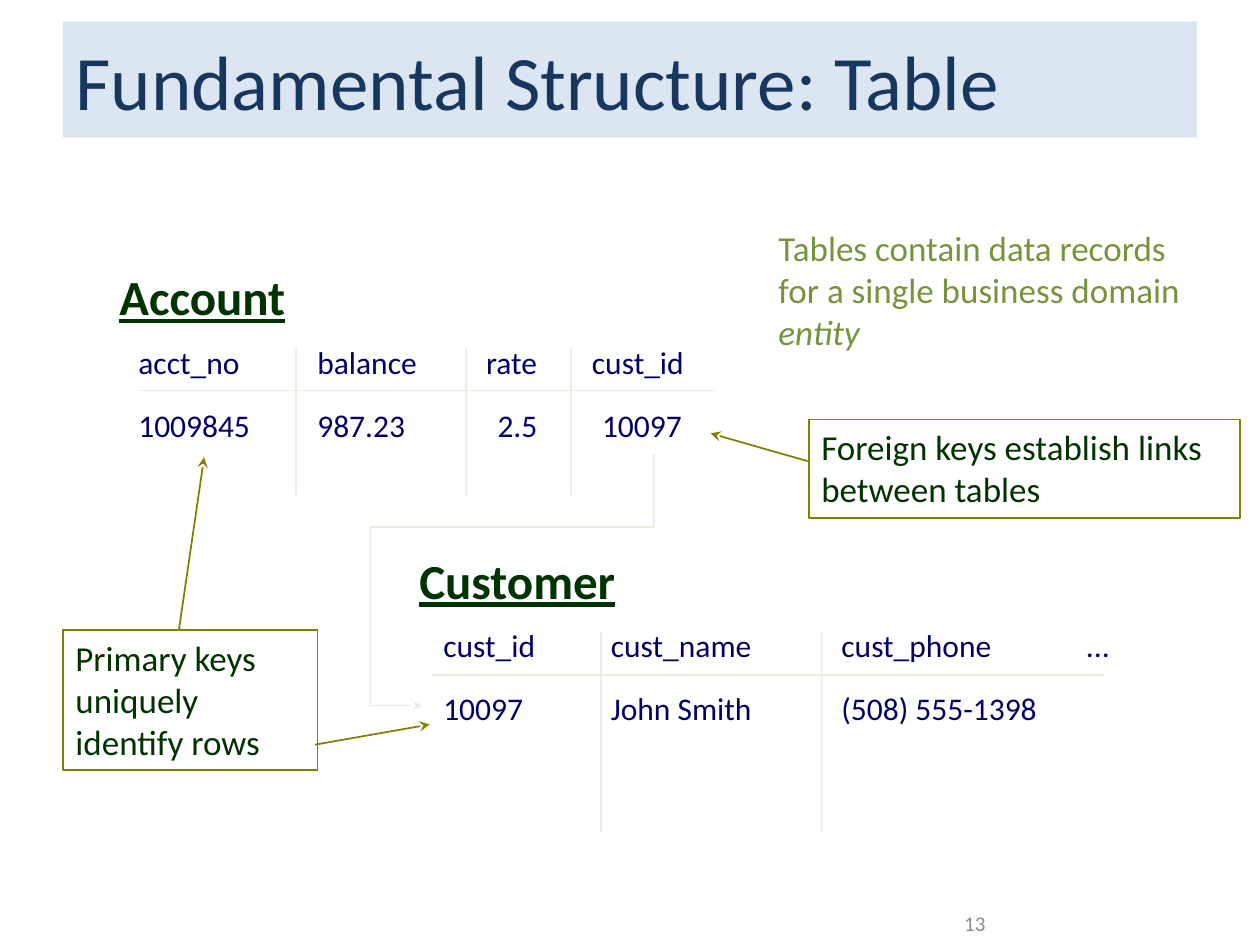
import pptx
import pptx.util
import pptx.dml.color
import pptx.enum.shapes
import pptx.enum.text
import pptx.oxml.ns
from lxml import etree

Inches = pptx.util.Inches
FONT = "Calibri"
COLORS = {
    "band": "DCE6F2",
    "title": "17375E",
    "heading": "003300",
    "data": "000066",
    "grid": "EEECE1",
    "callout": "808000",
    "remark": "77933C",
    "number": "8C8C8C",
}


def rgb(name):
    return pptx.dml.color.RGBColor.from_string(COLORS[name])


def add_text(slide, text, left, top, width, height, size=18, color="data", bold=None,
             underline=None, italic_tail="", wrap=False, grow=True, fill=None,
             outline=None, anchor="TOP", align="LEFT"):
    box = [Inches(v) for v in (left, top, width, height)]
    if fill or outline:
        sp = slide.shapes.add_shape(pptx.enum.shapes.MSO_SHAPE.RECTANGLE, *box)
        sp.shadow.inherit = False
        if fill:
            sp.fill.solid()
            sp.fill.fore_color.rgb = rgb(fill)
        else:
            sp.fill.background()
        if outline:
            sp.line.color.rgb = rgb(outline)
            sp.line.width = pptx.util.Pt(1)
        else:
            sp.line.fill.background()
    else:
        sp = slide.shapes.add_textbox(*box)
    tf = sp.text_frame
    tf.word_wrap = wrap
    sizes = pptx.enum.text.MSO_AUTO_SIZE
    tf.auto_size = sizes.SHAPE_TO_FIT_TEXT if grow else sizes.NONE
    tf.vertical_anchor = getattr(pptx.enum.text.MSO_ANCHOR, anchor)
    p = tf.paragraphs[0]
    p.alignment = getattr(pptx.enum.text.PP_ALIGN, align)
    for part, italic in ((text, None), (italic_tail, True)):
        if part:
            r = p.add_run()
            r.text = part
            r.font.name = FONT
            r.font.size = pptx.util.Pt(size)
            r.font.color.rgb = rgb(color)
            r.font.bold = bold
            r.font.underline = underline
            r.font.italic = italic
    return sp


def add_line(slide, x1, y1, x2, y2, color="grid", arrow=False):
    line = slide.shapes.add_connector(
        pptx.enum.shapes.MSO_CONNECTOR.STRAIGHT, *[Inches(v) for v in (x1, y1, x2, y2)])
    line.line.color.rgb = rgb(color)
    line.line.width = pptx.util.Pt(1)
    qn = pptx.oxml.ns.qn
    if arrow:
        etree.SubElement(line.line._get_or_add_ln(), qn("a:tailEnd"), type="stealth")
    etree.SubElement(line._element.spPr, qn("a:effectLst"))


def add_entity(slide, name, name_box, top, columns, dividers, bottom, rule):
    add_text(slide, name, *name_box, size=28, color="heading", bold=True, underline=True)
    for field, x, width, value, value_x, value_width in columns:
        add_text(slide, field, x, top, width, 0.5)
        if value:
            add_text(slide, value, value_x, top + 0.5, value_width, 0.5)
    for x in dividers:
        add_line(slide, x, top + 0.1, x, bottom)
    rule_left, rule_right, rule_y = rule
    add_line(slide, rule_left, rule_y, rule_right, rule_y)


def add_callout(slide, text, box, arrows):
    add_text(slide, text, *box, size=20, color="heading", wrap=True, outline="callout")
    for ends in arrows:
        add_line(slide, *ends, color="callout", arrow=True)


def add_key_link(slide):
    points = [(5.19, 3.6), (5.19, 4.18), (2.94, 4.18), (2.94, 5.6), (3.35, 5.6)]
    for i, (start, end) in enumerate(zip(points, points[1:]), 2):
        add_line(slide, *start, *end, arrow=i == len(points))


def main():
    prs = pptx.Presentation()
    prs.slide_width, prs.slide_height = Inches(10), Inches(7.5)
    s = prs.slides.add_slide(prs.slide_layouts[6])

    add_text(s, "Fundamental Structure: Table", 0.5, 0.17, 9, 0.92, size=44, color="title",
             wrap=True, grow=False, fill="band", anchor="MIDDLE")
    add_entity(s, "Account", (0.85, 2.07, 1.53, 0.57), 2.67, [
        ("acct_no", 1, 1.32, "1009845", 1, 1.37),
        ("balance", 2.42, 1.32, "987.23", 2.42, 1.12),
        ("rate", 3.76, 0.77, "2.5", 3.85, 0.62),
        ("cust_id", 4.6, 1.27, "10097", 4.68, 1.03),
    ], (2.35, 3.7, 4.53), 3.93, (1.11, 5.67, 3.1))
    add_entity(s, "Customer", (3.23, 4.32, 1.77, 0.57), 4.92, [
        ("cust_id", 3.42, 1.27, "10097", 3.42, 1.03),
        ("cust_name", 4.75, 1.78, "John Smith", 4.75, 1.84),
        ("cust_phone", 6.58, 1.9, "(508) 555-1398", 6.58, 2.28),
        ("...", 8.52, 0.45, None, None, None),
    ], (4.77, 6.52), 6.6, (3.43, 8.76, 5.36))
    add_key_link(s)
    add_callout(s, "Primary keys uniquely identify rows", (0.5, 5, 2.02, 1.11),
                [(1.42, 5, 1.62, 3.63), (2.5, 5.91, 3.41, 5.75)])
    add_callout(s, "Foreign keys establish links between tables", (6.42, 3.33, 3.42, 0.78),
                [(6.41, 3.66, 5.64, 3.44)])
    add_text(s, "Tables contain data records for a single business domain ",
             6.08, 1.75, 3.42, 1.11, size=20, color="remark", italic_tail="entity", wrap=True)
    add_text(s, "13", 7.17, 7.17, 0.75, 0.31, size=12, color="number", wrap=True,
             grow=False, anchor="MIDDLE", align="RIGHT")
    prs.save("out.pptx")


if __name__ == "__main__":
    main()
